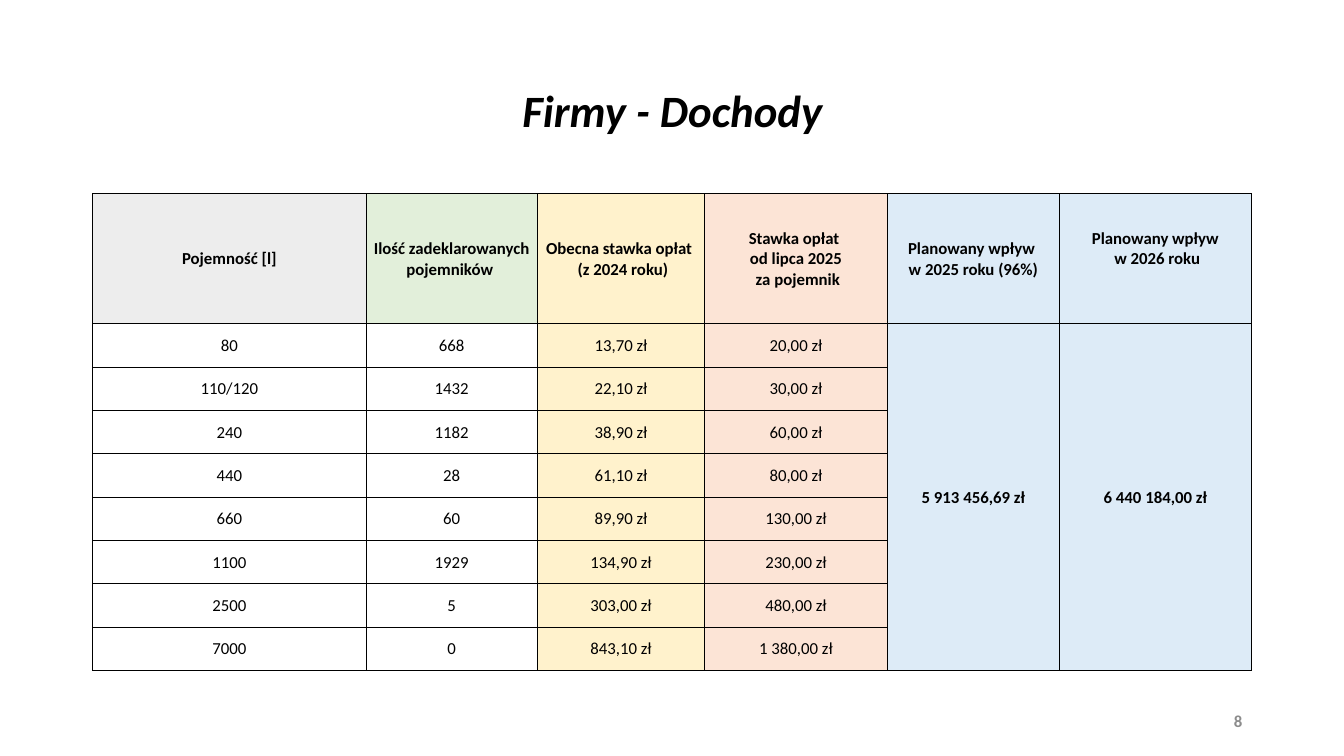
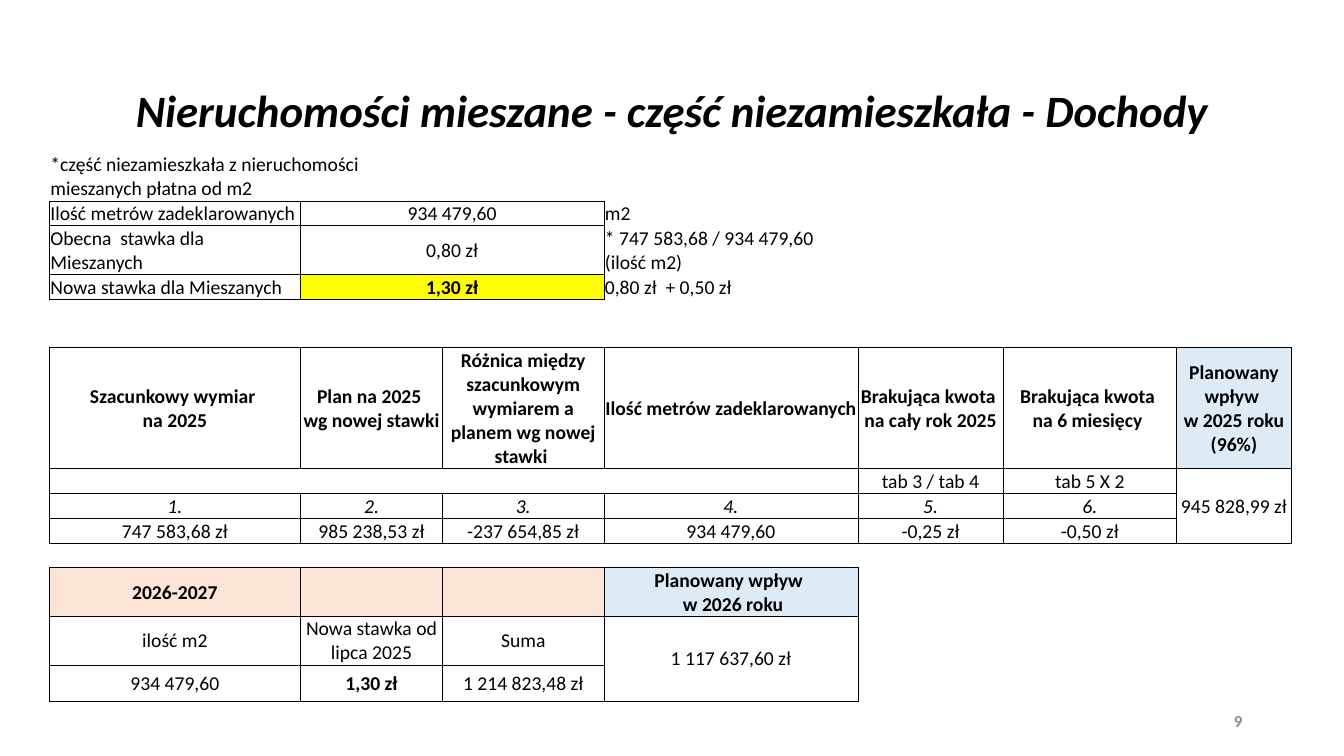
from dataclasses import dataclass
from typing import NamedTuple

from lxml import etree
from pptx import Presentation
from pptx.dml import color
from pptx.enum import text
from pptx.oxml import ns
from pptx.util import Inches, Pt


@dataclass(frozen=True)
class Theme:
    font: str = "Calibri"
    ink: str = "000000"
    muted: str = "8C8C8C"
    grey: str = "EDEDED"
    green: str = "E2EFDA"
    cream: str = "FFF2CC"
    peach: str = "FCE4D6"
    blue: str = "DDEBF7"
    yellow: str = "FFFF00"
    title_size: float = 32
    number_size: float = 12
    empty_size: float = 10
    border: float = 0.5
    table_style: str = "{2D5ABB26-0587-4C30-8999-92F81FD0307C}"


THEME = Theme()
EDGES = {"a:lnL": (0, -1), "a:lnR": (0, 1), "a:lnT": (-1, 0), "a:lnB": (1, 0)}


class Area(NamedTuple):
    top: int
    left: int
    bottom: int
    right: int

    def holds(self, row: int, column: int) -> bool:
        return self.top <= row <= self.bottom and self.left <= column <= self.right


@dataclass(frozen=True)
class Grid:
    left: float
    top: float
    columns: list[float]
    heights: list[float]
    rows: list[list[str]]
    size: float
    merges: list[Area]
    fills: dict[Area, str]
    bold: list[Area]
    italic: list[Area]
    left_aligned: list[Area]
    open_areas: list[Area]


@dataclass(frozen=True)
class Page:
    title: str
    number: int
    grid: Grid


def within(areas: list[Area], row: int, column: int) -> bool:
    return any(area.holds(row, column) for area in areas)


def format_paragraph(para, size: float, ink: str, bold: bool = False, italic: bool = False) -> None:
    for span in para.runs:
        span.font.name = THEME.font
        span.font.size = Pt(size)
        span.font.bold = bold
        span.font.italic = italic
        span.font.color.rgb = color.RGBColor.from_string(ink)


def set_mark_sizes(para, size: float) -> None:
    points = str(int(size * 100))
    for line_break in para._p.findall(ns.qn("a:br")):
        etree.SubElement(line_break, ns.qn("a:rPr"), sz=points)
    etree.SubElement(para._p, ns.qn("a:endParaRPr"), sz=points)


def draw_borders(cell, grid: Grid, row: int, column: int) -> None:
    properties = cell._tc.get_or_add_tcPr()
    for tag, (down, across) in EDGES.items():
        near = (row + down, column + across)
        inside = 0 <= near[0] < len(grid.heights) and 0 <= near[1] < len(grid.columns)
        closed = not within(grid.open_areas, row, column)
        line = etree.SubElement(properties, ns.qn(tag), w=str(Pt(THEME.border)))
        if closed or (inside and not within(grid.open_areas, *near)):
            fill = etree.SubElement(line, ns.qn("a:solidFill"))
            etree.SubElement(fill, ns.qn("a:srgbClr"), val=THEME.ink)
        else:
            etree.SubElement(line, ns.qn("a:noFill"))


def fill_cell(cell, grid: Grid, row: int, column: int) -> None:
    cell.margin_left = cell.margin_right = cell.margin_top = Inches(0.01)
    cell.margin_bottom = 0
    cell.vertical_anchor = text.MSO_ANCHOR.MIDDLE
    words = grid.rows[row][column] if column < len(grid.rows[row]) else ""
    para = cell.text_frame.paragraphs[0]
    para.text = words
    to_left = within(grid.left_aligned, row, column)
    para.alignment = text.PP_ALIGN.LEFT if to_left else text.PP_ALIGN.CENTER
    format_paragraph(para, grid.size, THEME.ink,
                     within(grid.bold, row, column), within(grid.italic, row, column))
    set_mark_sizes(para, grid.size if words else THEME.empty_size)
    draw_borders(cell, grid, row, column)
    shade = next((value for area, value in grid.fills.items() if area.holds(row, column)), None)
    if shade:
        cell.fill.solid()
        cell.fill.fore_color.rgb = color.RGBColor.from_string(shade)
    else:
        cell.fill.background()


def add_grid(slide, grid: Grid) -> None:
    frame = slide.shapes.add_table(
        len(grid.heights), len(grid.columns), Inches(grid.left), Inches(grid.top),
        Inches(sum(grid.columns)), Inches(sum(grid.heights)))
    table = frame.table
    table.first_row = table.horz_banding = False
    table._tbl.tblPr.find(ns.qn("a:tableStyleId")).text = THEME.table_style
    for column, width in zip(table.columns, grid.columns):
        column.width = Inches(width)
    for row, height in zip(table.rows, grid.heights):
        row.height = Inches(height)
    for area in grid.merges:
        table.cell(area.top, area.left).merge(table.cell(area.bottom, area.right))
    for row in range(len(grid.heights)):
        for column in range(len(grid.columns)):
            fill_cell(table.cell(row, column), grid, row, column)


def add_title(slide, words: str) -> None:
    title = slide.shapes.title
    title.left, title.top = Inches(0.92), Inches(0.4)
    title.width, title.height = Inches(11.5), Inches(1.45)
    frame = title.text_frame
    frame.text = words
    frame.word_wrap = True
    frame.auto_size = text.MSO_AUTO_SIZE.NONE
    frame.vertical_anchor = text.MSO_ANCHOR.MIDDLE
    para = frame.paragraphs[0]
    para.alignment = text.PP_ALIGN.CENTER
    para.line_spacing = 0.9
    format_paragraph(para, THEME.title_size, THEME.ink, bold=True, italic=True)


def add_number(slide, number: int) -> None:
    box = slide.shapes.add_textbox(Inches(9.42), Inches(6.95), Inches(3), Inches(0.4))
    frame = box.text_frame
    frame.word_wrap = True
    frame.vertical_anchor = text.MSO_ANCHOR.MIDDLE
    para = frame.paragraphs[0]
    para.text = str(number)
    para.alignment = text.PP_ALIGN.RIGHT
    format_paragraph(para, THEME.number_size, THEME.muted, bold=True)


COMPANIES = Grid(
    left=0.92,
    top=1.92,
    columns=[2.71, 1.7, 1.66, 1.81, 1.71, 1.9],
    heights=[1.29] + [0.43] * 8,
    rows=[
        ["Pojemność [l]", "Ilość zadeklarowanych pojemników ",
         "Obecna stawka opłat \n (z 2024 roku)",
         "Stawka opłat \nod lipca 2025\n za pojemnik",
         "Planowany wpływ \nw 2025 roku (96%)", "Planowany wpływ\n w 2026 roku\n"],
        ["80", "668", "13,70 zł", "20,00 zł", "5 913 456,69 zł", "6 440 184,00 zł"],
        ["110/120", "1432", "22,10 zł", "30,00 zł"],
        ["240", "1182", "38,90 zł", "60,00 zł"],
        ["440", "28", "61,10 zł", "80,00 zł"],
        ["660", "60", "89,90 zł", "130,00 zł"],
        ["1100", "1929", "134,90 zł", "230,00 zł"],
        ["2500", "5", "303,00 zł", "480,00 zł"],
        ["7000", "0", "843,10 zł", "1 380,00 zł"],
    ],
    size=12,
    merges=[Area(1, 4, 8, 4), Area(1, 5, 8, 5)],
    fills={
        Area(0, 0, 0, 0): THEME.grey,
        Area(0, 1, 0, 1): THEME.green,
        Area(0, 2, 8, 2): THEME.cream,
        Area(0, 3, 8, 3): THEME.peach,
        Area(0, 4, 8, 5): THEME.blue,
    },
    bold=[Area(0, 0, 0, 5), Area(1, 4, 8, 5)],
    italic=[],
    left_aligned=[],
    open_areas=[],
)

LINE = 0.24
MIXED = Grid(
    left=0.49,
    top=1.51,
    columns=[2.49, 1.41, 1.6, 2.52, 1.44, 1.72, 1.14],
    heights=[LINE * lines for lines in (2, 1, 2, 1, 1, 1, 5, 1, 1, 1, 1, 2, 2, 1.5)],
    rows=[
        ["*część niezamieszkała z nieruchomości mieszanych płatna od m2"],
        ["Ilość metrów zadeklarowanych", "934 479,60", "", "m2"],
        ["Obecna  stawka dla Mieszanych", "0,80 zł", "", "* 747 583,68 / 934 479,60 (ilość m2)"],
        ["Nowa stawka dla Mieszanych", "1,30 zł", "", "0,80 zł  + 0,50 zł"],
        [],
        [],
        ["Szacunkowy wymiar \nna 2025", "Plan na 2025 \nwg nowej stawki",
         "Różnica między szacunkowym wymiarem a planem wg nowej stawki ",
         "Ilość metrów zadeklarowanych ", "Brakująca kwota \nna cały rok 2025",
         "Brakująca kwota \nna 6 miesięcy ", "Planowany wpływ \nw 2025 roku (96%)"],
        ["", "", "", "", "tab 3 / tab 4", "tab 5 X 2", "945 828,99 zł"],
        [f"{step}." for step in range(1, 7)],
        ["747 583,68 zł", "985 238,53 zł", "-237 654,85 zł", "934 479,60", "-0,25 zł", "-0,50 zł"],
        [],
        ["2026-2027", "", "", "Planowany wpływ \n w 2026 roku"],
        ["ilość m2", "Nowa stawka od lipca 2025", "Suma", "1 117 637,60 zł"],
        ["934 479,60", "1,30 zł", "1 214 823,48 zł"],
    ],
    size=14,
    merges=[Area(0, 0, 0, 1), *(Area(row, 1, row, 2) for row in (1, 2, 3)),
            Area(7, 0, 7, 3), Area(7, 6, 9, 6), Area(12, 3, 13, 3)],
    fills={
        Area(3, 1, 3, 2): THEME.yellow,
        Area(6, 6, 6, 6): THEME.blue,
        Area(11, 0, 11, 2): THEME.peach,
        Area(11, 3, 11, 3): THEME.blue,
    },
    bold=[Area(3, 1, 3, 2), Area(6, 0, 6, 6), Area(11, 0, 11, 3), Area(13, 1, 13, 1)],
    italic=[Area(8, 0, 8, 5)],
    left_aligned=[Area(0, 0, 3, 0), Area(1, 3, 3, 3)],
    open_areas=[Area(0, 0, 0, 6), Area(1, 3, 3, 6), Area(4, 0, 5, 6),
                Area(10, 0, 10, 6), Area(11, 4, 13, 6)],
)

PAGES = [
    Page("Firmy - Dochody", 8, COMPANIES),
    Page("Nieruchomości mieszane - część niezamieszkała - Dochody", 9, MIXED),
]


def main() -> None:
    deck = Presentation()
    deck.slide_width, deck.slide_height = Inches(13.33), Inches(7.5)
    title_only = deck.slide_layouts[5]
    for page in PAGES:
        slide = deck.slides.add_slide(title_only)
        add_title(slide, page.title)
        add_grid(slide, page.grid)
        add_number(slide, page.number)
    deck.save("out.pptx")


if __name__ == "__main__":
    main()
